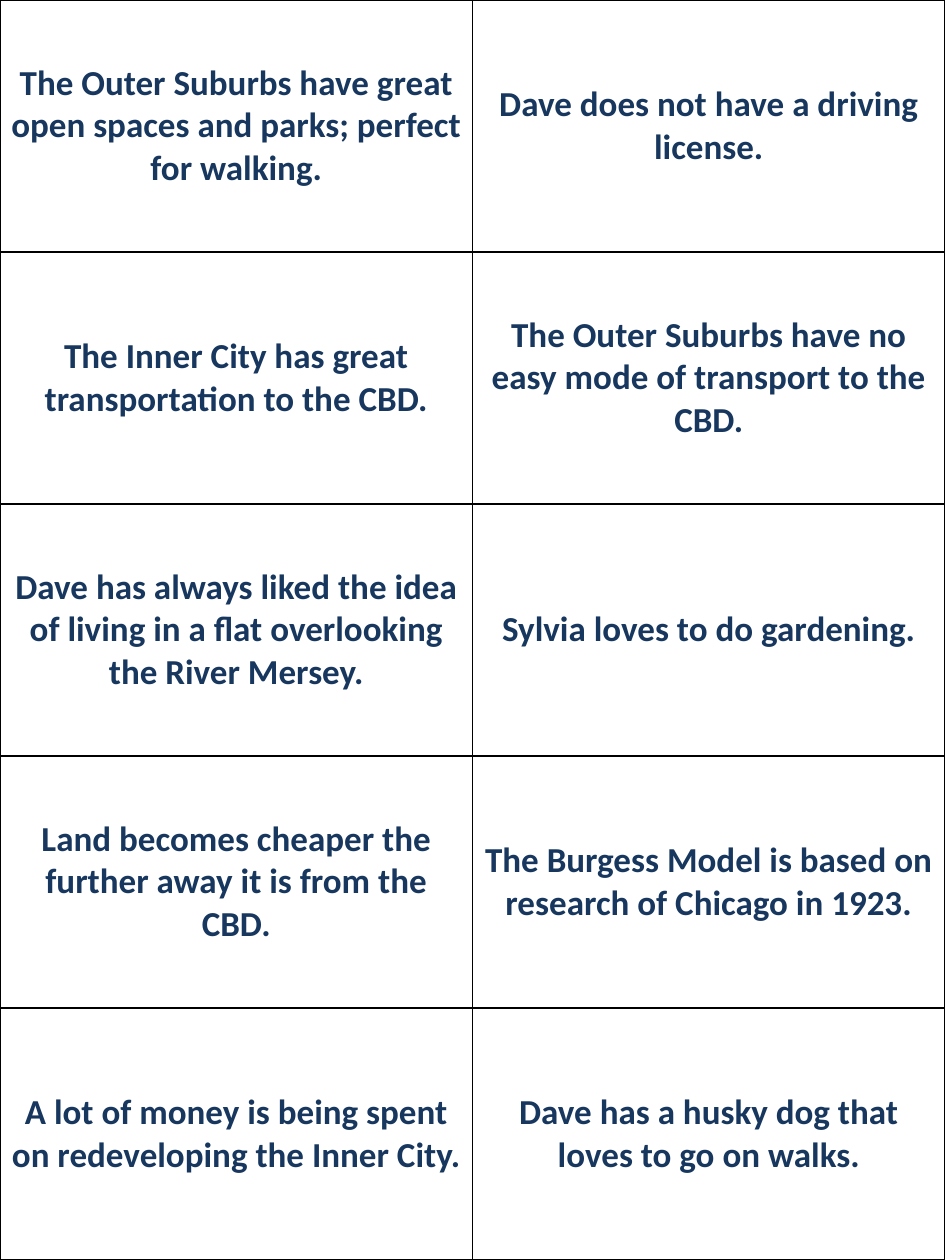
from lxml import etree
from pptx import Presentation
from pptx import util as u
from pptx.dml.color import RGBColor
from pptx.enum import text
from pptx.oxml.ns import qn

PX = 914400 / 126  # EMU in one px
WIDE, HIGH, INSET = 945, 1260, 9
HUES = {"ink": "17375E", "rule": "000000", "paper": "FFFFFF"}

CARDS = [
    ("The Outer Suburbs have great open spaces and parks; perfect for walking.",
     "Dave does not have a driving license."),
    ("The Inner City has great transportation to the CBD.",
     "The Outer Suburbs have no easy mode of transport to the CBD."),
    ("Dave has always liked the idea of living in a flat overlooking the River Mersey.",
     "Sylvia loves to do gardening."),
    ("Land becomes cheaper the further away it is from the CBD.",
     "The Burgess Model is based on research of Chicago in 1923."),
    ("A lot of money is being spent on redeveloping the Inner City.",
     "Dave has a husky dog that loves to go on walks."),
]


def px(n):
    return u.Emu(round(n * PX))


def add_rules(cell):
    """Draw a thin line on all four sides of a cell."""
    props = cell._tc.get_or_add_tcPr()
    for spot, side in enumerate(("lnL", "lnR", "lnT", "lnB")):
        line = etree.Element(qn("a:" + side), w=str(u.Pt(1)))
        fill = etree.SubElement(line, qn("a:solidFill"))
        etree.SubElement(fill, qn("a:srgbClr"), val=HUES["rule"])
        props.insert(spot, line)


# Slide
deck = Presentation()
deck.slide_width, deck.slide_height = px(WIDE), px(HIGH)
slide = deck.slides.add_slide(deck.slide_layouts[6])

# Card grid, equal rows and columns over the whole slide
rows, cols = len(CARDS), len(CARDS[0])
grid = slide.shapes.add_table(rows, cols, 0, 0, px(WIDE), px(HIGH)).table
grid.first_row = grid.horz_banding = False
for col in grid.columns:
    col.width = px(WIDE / cols)
for row in grid.rows:
    row.height = px(HIGH / rows)

# Card text
for r, pair in enumerate(CARDS):
    for c, words in enumerate(pair):
        cell = grid.cell(r, c)
        cell.fill.solid()
        cell.fill.fore_color.rgb = RGBColor.from_string(HUES["paper"])
        add_rules(cell)
        cell.margin_left = cell.margin_right = px(INSET)
        cell.margin_top = cell.margin_bottom = px(INSET)
        cell.vertical_anchor = text.MSO_ANCHOR.MIDDLE
        para = cell.text_frame.paragraphs[0]
        para.text = words
        para.alignment = text.PP_ALIGN.CENTER
        font = para.runs[0].font
        font.name, font.size, font.bold = "Calibri", u.Pt(20), True
        font.color.rgb = RGBColor.from_string(HUES["ink"])

deck.save("out.pptx")
